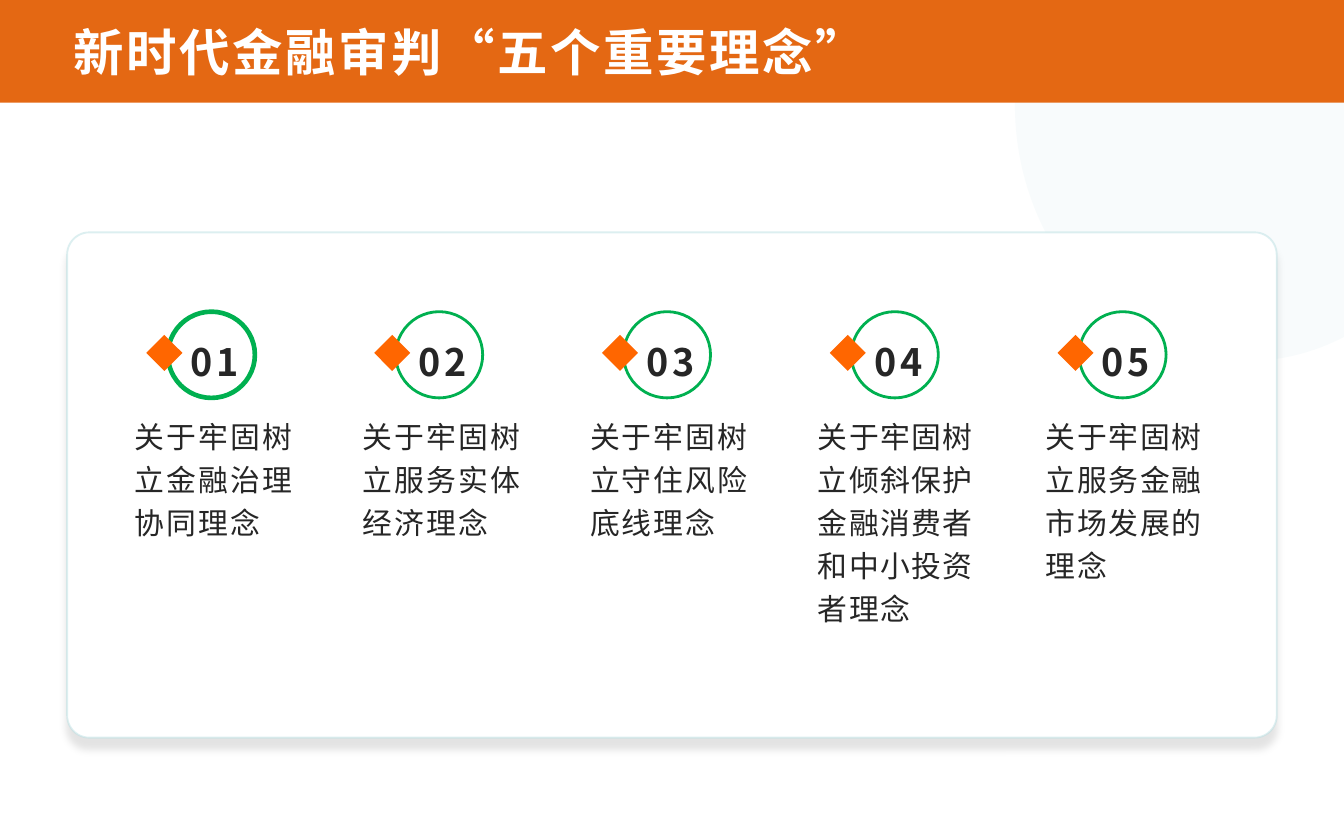
import math

import lxml.etree
import pptx
import pptx.dml.color
import pptx.enum.shapes
import pptx.enum.text
import pptx.oxml.ns
import pptx.util

Pt = pptx.util.Pt
SHAPE = pptx.enum.shapes.MSO_SHAPE
ALIGN = pptx.enum.text.PP_ALIGN
ANCHOR = pptx.enum.text.MSO_ANCHOR
qn = pptx.oxml.ns.qn

FONT = "Noto Sans CJK SC"
WIDTH, HEIGHT = 720, 450
COLUMN_STEP = 122.04
ORANGE, DIAMOND, GREEN = "E46813", "FF6600", "00B050"
MINT, INK, WHITE = "BBE0E3", "262626", "FFFFFF"

TITLE = "新时代金融审判“五个重要理念”"
CONCEPTS = [
    ("关于牢固树立金融治理协同理念", 1.2, 2.5),
    ("关于牢固树立服务实体经济理念", 1.2, 1.5),
    ("关于牢固树立守住风险底线理念", 1.2, 1.5),
    ("关于牢固树立倾斜保护金融消费者和中小投资者理念", 0.8, 1.5),
    ("关于牢固树立服务金融市场发展的理念", 1, 1.5),
]


def paint(color_format, color):
    color_format.rgb = pptx.dml.color.RGBColor.from_string(color)


def add_alpha(color_element, percent):
    alpha = lxml.etree.SubElement(color_element, qn("a:alpha"))
    alpha.set("val", str(percent * 1000))


def style(shape, fill=None, line=None, weight=1):
    shape.shadow.inherit = False
    if fill:
        shape.fill.solid()
        paint(shape.fill.fore_color, fill)
    else:
        shape.fill.background()
    if line:
        paint(shape.line.color, line)
        shape.line.width = Pt(weight)
    else:
        shape.line.fill.background()


def add_shape(page, kind, box, **look):
    shape = page.shapes.add_shape(kind, *map(Pt, box))
    style(shape, **look)
    return shape


def write(shape, text, size, color, spacing, bold=False, align=ALIGN.LEFT,
          anchor=ANCHOR.TOP, margins=(0, 0), line_spacing=1, space_after=0):
    frame = shape.text_frame
    frame.text = text
    frame.word_wrap = True
    frame.auto_size = pptx.enum.text.MSO_AUTO_SIZE.NONE
    frame.vertical_anchor = anchor
    frame.margin_left = frame.margin_right = Pt(margins[0])
    frame.margin_top = frame.margin_bottom = Pt(margins[1])
    para = frame.paragraphs[0]
    para.alignment = align
    para.line_spacing = line_spacing
    para.space_before = Pt(0)
    para.space_after = Pt(space_after)
    span = para.runs[0]
    span.font.size = Pt(size)
    span.font.bold = bold
    span.font.name = FONT
    paint(span.font.color, color)
    properties = span.font._element
    properties.set("spc", str(round(spacing * 100)))
    lxml.etree.SubElement(properties, qn("a:ea")).set("typeface", FONT)


def add_corner_circle(page, center_x, center_y, radius_x, radius_y):
    start = math.acos((WIDTH - center_x) / radius_x)
    end = math.pi + math.asin(center_y / radius_y)
    steps = 90
    angles = [start + (end - start) * step / steps for step in range(steps + 1)]
    points = [(Pt(center_x + radius_x * math.cos(angle)),
               Pt(center_y + radius_y * math.sin(angle))) for angle in angles]
    builder = page.shapes.build_freeform(Pt(WIDTH), 0)
    builder.add_line_segments(points, close=True)
    circle = builder.convert_to_shape()
    style(circle, fill=MINT)
    add_alpha(circle._element.spPr.find(".//" + qn("a:srgbClr")), 10)


def add_card(page, box):
    card = add_shape(page, SHAPE.ROUNDED_RECTANGLE, box, fill=WHITE, line=MINT)
    card.adjustments[0] = 0.044
    properties = card._element.spPr
    add_alpha(properties.find(qn("a:ln")).find(".//" + qn("a:srgbClr")), 50)
    shadow = lxml.etree.SubElement(
        properties.find(qn("a:effectLst")), qn("a:outerShdw"),
        blurRad=str(Pt(4)), dist=str(Pt(6)), dir="5400000",
        algn="t", rotWithShape="0")
    shade = lxml.etree.SubElement(shadow, qn("a:srgbClr"), val="000000")
    add_alpha(shade, 11)


def add_concept(page, box, number, text, spacing, weight):
    left, top, width, height = box
    ring = add_shape(page, SHAPE.ARC, (left + 18, top, 46.6, 46.2),
                     line=GREEN, weight=weight)
    ring.adjustments[0] = 116.191
    ring.adjustments[1] = 102.951
    body = page.shapes.add_textbox(
        *map(Pt, (left, top + 53.3, width, height - 53.3)))
    write(body, text, 16, INK, spacing, line_spacing=1.2, space_after=8)
    label = page.shapes.add_textbox(
        *map(Pt, (left + 25.4, top + 6.5, 35.3, 32.4)))
    write(label, f"{number:02}", 20.2, INK, 2, bold=True, align=ALIGN.CENTER,
          anchor=ANCHOR.MIDDLE, line_spacing=1.3)
    add_shape(page, SHAPE.DIAMOND, (left + 6.4, top + 12.4, 19.3, 19.3),
              fill=DIAMOND)


def add_header(page, box):
    left, top, width, height = box
    add_shape(page, SHAPE.RECTANGLE, box, fill=ORANGE)
    title = page.shapes.title
    title.left, title.top = Pt(left + 36), Pt(top + 7.9)
    title.width, title.height = Pt(513.4), Pt(39.6)
    write(title, TITLE, 27, WHITE, 1.4, bold=True,
          anchor=ANCHOR.MIDDLE, margins=(3.6, 1.4))
    page.shapes._spTree.append(title._element)


def main():
    deck = pptx.Presentation()
    deck.slide_width, deck.slide_height = Pt(WIDTH), Pt(HEIGHT)
    page = deck.slides.add_slide(deck.slide_layouts.get_by_name("Title Only"))
    add_corner_circle(page, 667.5, 56, 123.8, 137.5)
    add_card(page, (36, 124.5, 648, 270.7))
    for index, concept in enumerate(CONCEPTS):
        box = (72 + index * COLUMN_STEP, 167, 87.8, 185)
        add_concept(page, box, index + 1, *concept)
    add_header(page, (0, 0, WIDTH, 55))
    deck.save("out.pptx")


if __name__ == "__main__":
    main()
